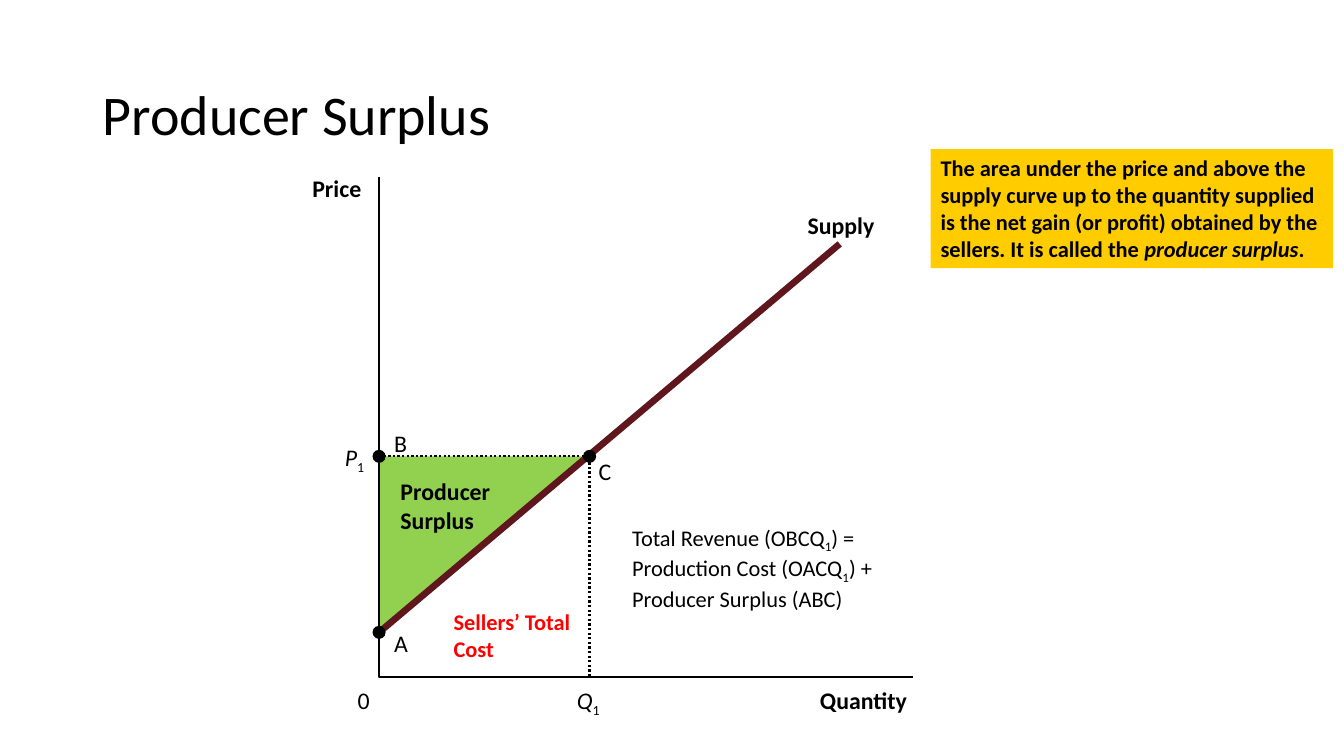
from dataclasses import dataclass

from lxml import etree
from pptx import Presentation, util as u
from pptx.dml.color import RGBColor
from pptx.enum import dml, shapes, text
from pptx.oxml.ns import qn


@dataclass(frozen=True)
class Theme:
    font: str = "Calibri"
    title_size: int = 40
    label_size: int = 17
    note_size: int = 16
    ink: str = "000000"
    surplus: str = "92D050"
    supply: str = "5F161D"
    cost: str = "FF0000"
    callout: str = "FFCC00"
    thin: float = 1.63
    thick: float = 4.75
    dot: float = 0.13
    label_height: float = 0.29


THEME = Theme()
SLIDE_WIDTH, SLIDE_HEIGHT = 13.33, 7.5
PLAIN, BOLD, ITALIC, SUB = {}, {"bold": True}, {"italic": True}, {"sub": True}


@dataclass(frozen=True)
class Box:
    left: float
    top: float
    width: float
    height: float

    def emu(self):
        return [u.Inches(n) for n in (self.left, self.top, self.width, self.height)]

    def at(self, x, y):
        """Inches of a point in percent of the box, counted from its lower left corner."""
        return self.left + self.width * x / 100, self.top + self.height * (1 - y / 100)


def write(shape, lines, size, color=THEME.ink, inset=True, **frame_format):
    """Fill a shape with lines, each a list of (words, style) runs."""
    frame = shape.text_frame
    settings = {"word_wrap": inset, "vertical_anchor": text.MSO_ANCHOR.TOP, **frame_format}
    if not inset:
        settings.update(dict.fromkeys(
            ("margin_left", "margin_top", "margin_right", "margin_bottom"), 0))
    for name, value in settings.items():
        setattr(frame, name, value)
    for index, line in enumerate(lines):
        paragraph = frame.paragraphs[0] if index == 0 else frame.add_paragraph()
        paragraph.alignment = text.PP_ALIGN.LEFT
        for words, style in line:
            run = paragraph.add_run()
            run.text = words
            font = run.font
            font.color.rgb = RGBColor.from_string(color)
            values = {"name": THEME.font, "size": u.Pt(size), **style}
            if values.pop("sub", False):
                run._r.get_or_add_rPr().set("baseline", "-25000")
            for name, value in values.items():
                setattr(font, name, value)


def paint(shape, color):
    shape.shadow.inherit = False
    shape.fill.solid()
    shape.fill.fore_color.rgb = RGBColor.from_string(color)
    shape.line.fill.background()


def stroke(line, color, width, dash=None):
    line.color.rgb = RGBColor.from_string(color)
    line.width = u.Pt(width)
    if dash:
        line.dash_style = dash


def outline(slide, points, close=False):
    (start, *rest) = [(u.Inches(x), u.Inches(y)) for x, y in points]
    builder = slide.shapes.build_freeform(*start)
    builder.add_line_segments(rest, close=close)
    shape = builder.convert_to_shape()
    shape.shadow.inherit = False
    return shape


def path(slide, points, dash=None):
    shape = outline(slide, points)
    shape.fill.background()
    stroke(shape.line, THEME.ink, THEME.thin, dash)


def add_title(slide, box):
    title = slide.shapes.add_textbox(*box.emu())
    write(title, [[("Producer Surplus", PLAIN)]], THEME.title_size,
          vertical_anchor=text.MSO_ANCHOR.MIDDLE)


def add_curves(slide, plot):
    price, supply_start, trade, supply_end, quantity = (
        plot.at(*point) for point in ((0, 44.2), (0, 9), (39.4, 44.2), (86.2, 86.7), (39.4, 0)))
    paint(outline(slide, [trade, price, supply_start], close=True), THEME.surplus)
    path(slide, [plot.at(0, 100), plot.at(0, 0), plot.at(100, 0)])

    supply = slide.shapes.add_connector(
        shapes.MSO_CONNECTOR.STRAIGHT, *[u.Inches(n) for n in (*supply_start, *supply_end)])
    stroke(supply.line, THEME.supply, THEME.thick)
    etree.SubElement(supply._element.spPr, qn("a:effectLst"))

    path(slide, [price, trade, quantity], dml.MSO_LINE.ROUND_DOT)
    for x, y in (price, supply_start, trade):
        box = Box(x - THEME.dot / 2, y - THEME.dot / 2, THEME.dot, THEME.dot)
        paint(slide.shapes.add_shape(shapes.MSO_SHAPE.OVAL, *box.emu()), THEME.ink)


def add_labels(slide, plot):
    below_axis = -1.6
    labels = [
        (-12.5, 100.8, 0.49, [[("Price", BOLD)]]),
        (82.5, below_axis, 0.87, [[("Quantity", BOLD)]]),
        (-4, below_axis, 0.12, [[("0", PLAIN)]]),
        (37, below_axis, 0.24, [[("Q", ITALIC), ("1", SUB)]]),
        (-6.4, 47, 0.2, [[("P", ITALIC), ("1", SUB)]]),
        (80.2, 93.3, 0.67, [[("Supply", BOLD)]]),
        (2.8, 9.7, 0.14, [[("A", PLAIN)]]),
        (2.8, 49.8, 0.13, [[("B", PLAIN)]]),
        (41.1, 44.2, 0.13, [[("C", PLAIN)]]),
        (4, 40.1, 0.95, [[("Producer", BOLD)], [("Surplus", BOLD)]]),
    ]
    for x, y, width, lines in labels:
        box = Box(*plot.at(x, y), width, THEME.label_height * len(lines))
        write(slide.shapes.add_textbox(*box.emu()), lines, THEME.label_size, inset=False)


def add_notes(slide, plot):
    notes = [
        (12.1, 14.9, 1.42, 0.64, THEME.cost, [[("Sellers’ Total Cost", BOLD)]]),
        (45.5, 31.7, 3, 0.9, THEME.ink, [
            [("Total Revenue (OBCQ", PLAIN), ("1", SUB), (") =", PLAIN)],
            [("Production Cost (OACQ", PLAIN), ("1", SUB),
             (") + Producer Surplus (ABC)", PLAIN)],
        ]),
    ]
    for x, y, width, height, color, lines in notes:
        box = Box(*plot.at(x, y), width, height)
        write(slide.shapes.add_textbox(*box.emu()), lines, THEME.note_size, color)


def add_callout(slide, box):
    callout = slide.shapes.add_shape(shapes.MSO_SHAPE.RECTANGLE, *box.emu())
    paint(callout, THEME.callout)
    write(callout, [[
        ("The area under the price and above the supply curve up to the quantity supplied "
         "is the net gain (or profit) obtained by the sellers. It is called the ", BOLD),
        ("producer surplus", {**BOLD, **ITALIC}),
        (".", BOLD),
    ]], THEME.note_size)


def main():
    presentation = Presentation()
    presentation.slide_width = u.Inches(SLIDE_WIDTH)
    presentation.slide_height = u.Inches(SLIDE_HEIGHT)
    slide = presentation.slides.add_slide(presentation.slide_layouts[6])
    plot = Box(3.76, 1.76, 5.3, 4.96)
    add_title(slide, Box(0.92, 0.4, 11.5, 1.45))
    add_curves(slide, plot)
    add_labels(slide, plot)
    add_notes(slide, plot)
    add_callout(slide, Box(9.23, 1.48, 3.99, 1.18))
    presentation.save("out.pptx")


if __name__ == "__main__":
    main()
